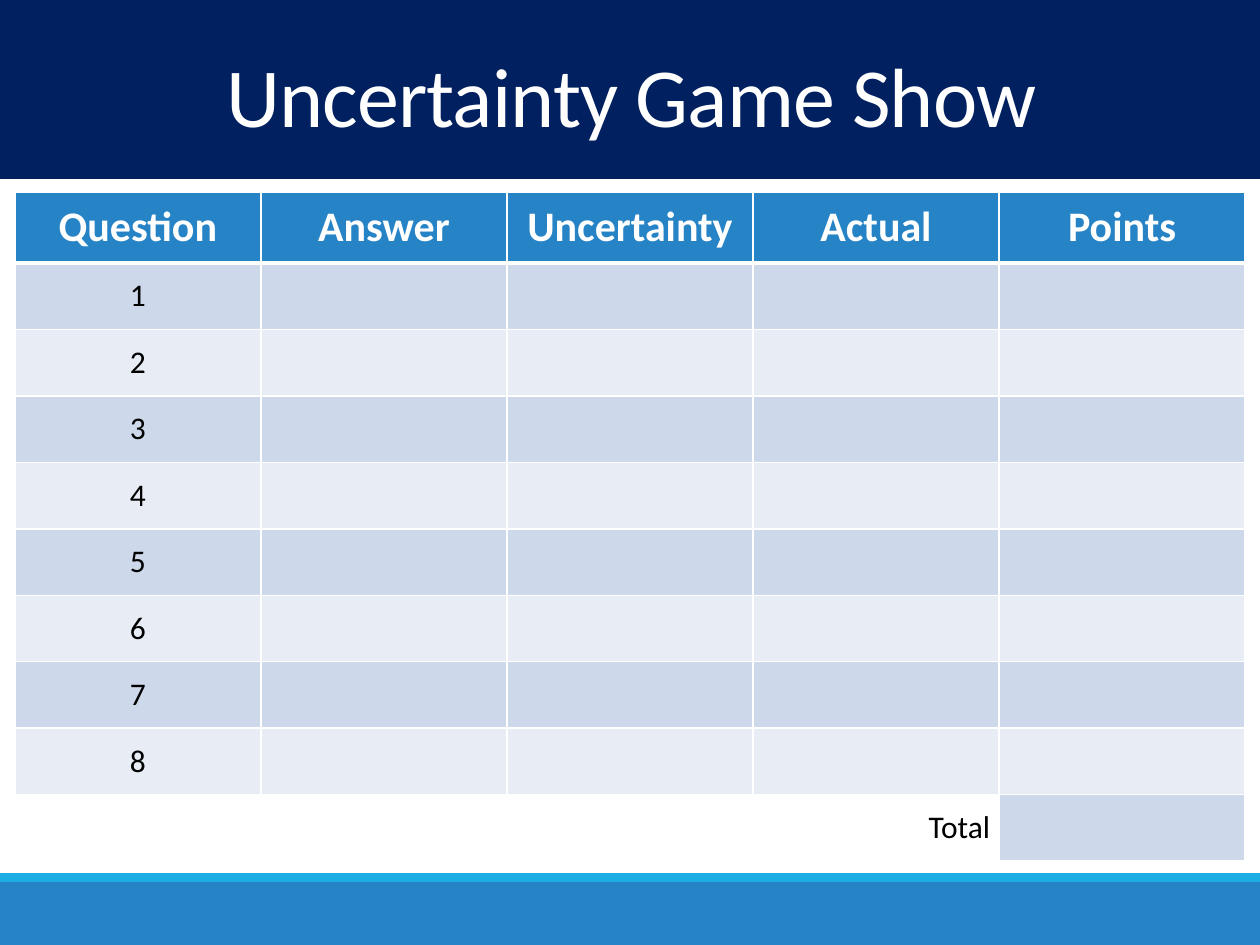
"""Build the score sheet slide for the Uncertainty Game Show."""
from lxml.etree import SubElement
from pptx import Presentation
from pptx.dml.color import RGBColor
from pptx.enum.shapes import MSO_SHAPE
from pptx.enum.text import MSO_ANCHOR, MSO_AUTO_SIZE, PP_ALIGN
from pptx.oxml.ns import qn
from pptx.util import Cm, Pt

WHITE = RGBColor(0xFF, 0xFF, 0xFF)
BLACK = RGBColor(0x00, 0x00, 0x00)
NAVY = RGBColor(0x00, 0x20, 0x60)
BLUE = RGBColor(0x26, 0x83, 0xC6)
SKY = RGBColor(0x1C, 0xAD, 0xE4)
DARK_BAND = RGBColor(0xCD, 0xD9, 0xEA)
LIGHT_BAND = RGBColor(0xE8, 0xED, 0xF5)

HEADINGS = ["Question", "Answer", "Uncertainty", "Actual", "Points"]
QUESTION_COUNT = 8
TOTAL_ROW = QUESTION_COUNT + 1
HEADER_FONT = {"name": "Calibri", "size": Pt(24), "bold": True}
BODY_FONT = {"name": "Calibri", "size": Pt(18), "bold": False}
TITLE_FONT = {"name": "Calibri", "size": Pt(48), "bold": False}


def format_paragraph(paragraph, font_format, color, alignment):
    paragraph.alignment = alignment
    for name, value in font_format.items():
        setattr(paragraph.font, name, value)
    paragraph.font.color.rgb = color


def add_borders(cell, widths):
    properties = cell._tc.get_or_add_tcPr()
    for index, (side, width) in enumerate(widths.items()):
        line = SubElement(properties, qn(f"a:ln{side}"), w=str(Pt(width)))
        fill = SubElement(line, qn("a:solidFill"))
        SubElement(fill, qn("a:srgbClr"), val=str(WHITE))
        properties.insert(index, line)


presentation = Presentation()
presentation.slide_width = Cm(25.4)
presentation.slide_height = Cm(19.05)
slide = presentation.slides.add_slide(presentation.slide_layouts[5])

bands = [(17.78, 1.27, BLUE), (17.6, 0.18, SKY), (0, 3.61, NAVY)]
for top, height, color in bands:
    band = slide.shapes.add_shape(
        MSO_SHAPE.RECTANGLE, 0, Cm(top), presentation.slide_width, Cm(height)
    )
    band.shadow.inherit = False
    band.fill.solid()
    band.fill.fore_color.rgb = color
    band.line.fill.background()

title = slide.shapes.title
band.element.addnext(title.element)
title_place = {"left": Cm(0.08), "top": Cm(0.99), "width": Cm(25.3), "height": Cm(2.13)}
for name, value in title_place.items():
    setattr(title, name, value)
title.text_frame.text = "Uncertainty Game Show"
title.text_frame.auto_size = MSO_AUTO_SIZE.NONE
title.text_frame.vertical_anchor = MSO_ANCHOR.MIDDLE
paragraph = title.text_frame.paragraphs[0]
paragraph.line_spacing = 0.85
format_paragraph(paragraph, TITLE_FONT, WHITE, PP_ALIGN.CENTER)
paragraph.runs[0].font._element.set("spc", "-50")

table = slide.shapes.add_table(
    TOTAL_ROW + 1, len(HEADINGS), Cm(0.3), Cm(3.88), Cm(24.8), Cm(13.48)
).table
for column in table.columns:
    column.width = Cm(4.96)
for row_index, row in enumerate(table.rows):
    is_header = row_index == 0
    row.height = Cm(1.42 if is_header else 1.34)
    band_color = DARK_BAND if row_index % 2 else LIGHT_BAND
    for column_index, cell in enumerate(row.cells):
        alignment = PP_ALIGN.CENTER
        if is_header:
            cell.text = HEADINGS[column_index]
        elif row_index < TOTAL_ROW and column_index == 0:
            cell.text = str(row_index)
        elif row_index == TOTAL_ROW and column_index == len(HEADINGS) - 2:
            cell.text = "Total"
            alignment = PP_ALIGN.RIGHT
        format_paragraph(
            cell.text_frame.paragraphs[0],
            HEADER_FONT if is_header else BODY_FONT,
            WHITE if is_header else BLACK,
            alignment,
        )
        cell.vertical_anchor = MSO_ANCHOR.MIDDLE
        for side in ("left", "top", "right", "bottom"):
            setattr(cell, f"margin_{side}", Cm(0.18))
        if row_index == TOTAL_ROW and column_index < len(HEADINGS) - 1:
            cell.fill.background()
        else:
            cell.fill.solid()
            cell.fill.fore_color.rgb = BLUE if is_header else band_color
        add_borders(
            cell,
            {"L": 1, "R": 1, "T": 3 if row_index == 1 else 1, "B": 3 if is_header else 1},
        )

presentation.save("out.pptx")
